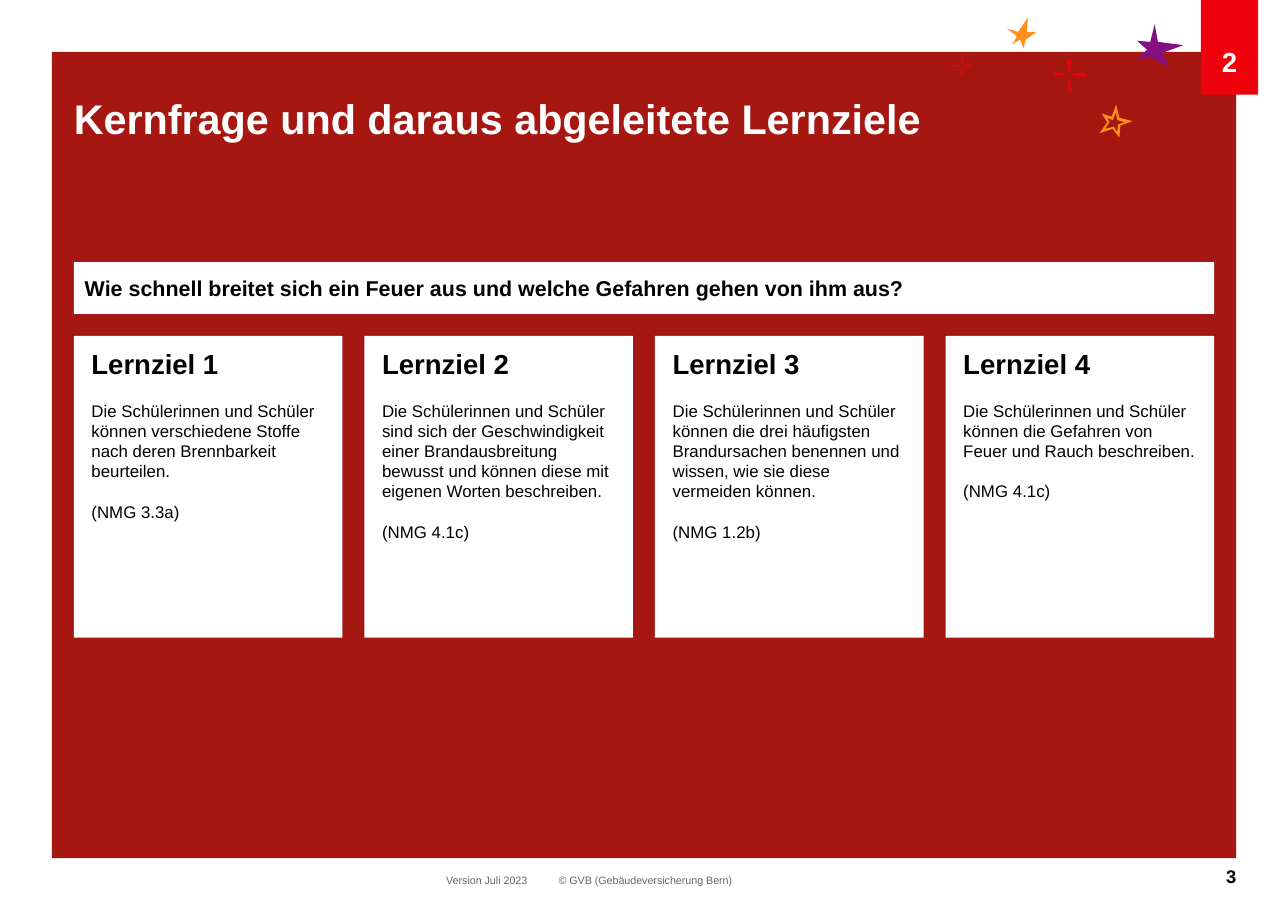
from pptx import Presentation
from pptx.dml.color import RGBColor
from pptx.enum.shapes import MSO_SHAPE
from pptx.enum.text import MSO_ANCHOR, PP_ALIGN
from pptx.util import Inches, Pt

FONT = "Arial"
DARK_RED = RGBColor(0xA6, 0x17, 0x11)
RED = RGBColor(0xEE, 0x00, 0x0C)
ORANGE = RGBColor(0xFF, 0x8F, 0x18)
PURPLE = RGBColor(0x83, 0x10, 0x80)
GRAY = RGBColor(0x66, 0x66, 0x66)
BLACK = RGBColor(0, 0, 0)
WHITE = RGBColor(0xFF, 0xFF, 0xFF)

TITLE = "Kernfrage und daraus abgeleitete Lernziele"
QUESTION = "Wie schnell breitet sich ein Feuer aus und welche Gefahren gehen von ihm aus?"
GOALS = [
    ("Lernziel 1", "Die Schülerinnen und Schüler können verschiedene Stoffe nach deren "
     "Brennbarkeit beurteilen.", "(NMG 3.3a)"),
    ("Lernziel 2", "Die Schülerinnen und Schüler sind sich der Geschwindigkeit einer "
     "Brandausbreitung bewusst und können diese mit eigenen Worten beschreiben.", "(NMG 4.1c)"),
    ("Lernziel 3", "Die Schülerinnen und Schüler können die drei häufigsten Brandursachen "
     "benennen und wissen, wie sie diese vermeiden können.", "(NMG 1.2b)"),
    ("Lernziel 4", "Die Schülerinnen und Schüler können die Gefahren von Feuer und Rauch "
     "beschreiben.", "(NMG 4.1c)"),
]
FOOTERS = [  # text, box, size, colour, bold, alignment
    ("Version Juli 2023", (4.05, 7.93, 0.85, 0.13), 7, GRAY, False, PP_ALIGN.LEFT),
    ("© GVB (Gebäudeversicherung Bern)", (5.07, 7.93, 1.62, 0.13), 7, GRAY, False, PP_ALIGN.LEFT),
    ("3", (10.51, 7.85, 0.71, 0.17), 12, BLACK, True, PP_ALIGN.RIGHT),
]

# Each star is a colour and its contours, in inches on the slide
STARS = [
    (PURPLE, [[(10.44, 0.38), (10.32, 0.37), (10.41, 0.45), (10.33, 0.54), (10.45, 0.52),
               (10.61, 0.61), (10.55, 0.48), (10.74, 0.41), (10.51, 0.38), (10.48, 0.22)]]),
    (ORANGE, [[(9.19, 0.4), (9.26, 0.36), (9.29, 0.44), (9.31, 0.36), (9.41, 0.29),
               (9.32, 0.29), (9.33, 0.16), (9.24, 0.29), (9.14, 0.26), (9.23, 0.33)]]),
    (ORANGE, [[(10.16, 1.25), (10.1, 1.17), (9.98, 1.21), (10.05, 1.11), (10, 1.03),
               (10.09, 1.06), (10.13, 0.95), (10.16, 1.07), (10.28, 1.1), (10.17, 1.14)],
              [(10.11, 1.15), (10.14, 1.2), (10.15, 1.13), (10.21, 1.11), (10.14, 1.09),
               (10.13, 1.02), (10.1, 1.09), (10.05, 1.07), (10.07, 1.11), (10.03, 1.17)]]),
]
# Rays of a spark around its centre, in inches
SPARK_RAYS = [
    [(0, -0.03), (-0.02, -0.14), (0.02, -0.13), (0.01, -0.03)],
    [(0.01, 0.03), (0.02, 0.15), (-0.01, 0.14), (0, 0.02)],
    [(0.03, -0.01), (0.14, -0.02), (0.15, 0.02), (0.03, 0)],
    [(-0.03, 0), (-0.13, 0.01), (-0.14, -0.02), (-0.03, -0.01)],
]
SPARKS = [(9.7, 0.68, 1), (8.73, 0.6, 0.58)]  # centre x, centre y, scale

LEFT, CONTENT_W = 0.67, 10.35
CARD_TOP, CARD_H, CARD_GAP = 3.05, 2.74, 0.2


def paint(shape, color):
    shape.shadow.inherit = False
    shape.fill.solid()
    shape.fill.fore_color.rgb = color
    shape.line.fill.background()


def add_rect(s, box, color):
    shape = s.shapes.add_shape(MSO_SHAPE.RECTANGLE, *map(Inches, box))
    paint(shape, color)
    return shape


def add_outline(s, contours, color):
    """Draw closed contours as one shape; an inner contour becomes a hole."""
    # The builder rounds to whole units, so points are passed in EMU
    contours = [[(Inches(x), Inches(y)) for x, y in points] for points in contours]
    builder = s.shapes.build_freeform(*contours[0][0])
    for i, points in enumerate(contours):
        if i:
            builder.move_to(*points[0])
        builder.add_line_segments(points[1:], close=True)
    paint(builder.convert_to_shape(), color)


def set_frame(tf, insets, anchor=MSO_ANCHOR.TOP, wrap=True):
    tf.word_wrap = wrap
    tf.vertical_anchor = anchor
    tf.margin_left, tf.margin_top, tf.margin_right, tf.margin_bottom = map(Inches, insets)


def write(p, text, size, color, bold=False, align=PP_ALIGN.LEFT):
    p.alignment = align
    r = p.add_run()
    r.text = text
    r.font.name, r.font.size, r.font.bold = FONT, Pt(size), bold
    r.font.color.rgb = color


def add_card(s, left, width, goal):
    tf = add_rect(s, (left, CARD_TOP, width, CARD_H), WHITE).text_frame
    set_frame(tf, (0.16, 0.1, 0.16, 0.1))
    for i, text in enumerate(goal):
        p = tf.add_paragraph() if i else tf.paragraphs[0]
        if i:
            p.space_before = Pt(13.2)
        write(p, text, 11 if i else 18, BLACK, bold=i == 0)


def main():
    prs = Presentation()
    prs.slide_width, prs.slide_height = Inches(11.69), Inches(8.27)
    s = prs.slides.add_slide(prs.slide_layouts[5])

    add_rect(s, (0.47, 0.47, 10.75, 7.32), DARK_RED)
    for color, contours in STARS:
        add_outline(s, contours, color)
    for cx, cy, scale in SPARKS:
        for ray in SPARK_RAYS:
            add_outline(s, [[(cx + x * scale, cy + y * scale) for x, y in ray]], RED)

    tf = add_rect(s, (10.9, 0, 0.52, 0.86), RED).text_frame
    set_frame(tf, (0, 0.4, 0, 0.15), MSO_ANCHOR.BOTTOM)
    write(tf.paragraphs[0], "2", 18, WHITE, True, PP_ALIGN.CENTER)

    title = s.shapes.title
    title.left, title.top, title.width, title.height = map(Inches, (LEFT, 0.85, 8.07, 0.58))
    title.element.getparent().append(title.element)  # in front of the red panel
    set_frame(title.text_frame, (0, 0, 0, 0))
    write(title.text_frame.paragraphs[0], TITLE, 27, WHITE, True)

    tf = add_rect(s, (LEFT, 2.38, CONTENT_W, 0.47), WHITE).text_frame
    set_frame(tf, (0.1, 0.05, 0.1, 0.05), MSO_ANCHOR.MIDDLE)
    write(tf.paragraphs[0], QUESTION, 14, BLACK, True)

    card_w = (CONTENT_W - CARD_GAP * (len(GOALS) - 1)) / len(GOALS)
    for i, goal in enumerate(GOALS):
        add_card(s, LEFT + i * (card_w + CARD_GAP), card_w, goal)

    for text, box, size, color, bold, align in FOOTERS:
        tf = s.shapes.add_textbox(*map(Inches, box)).text_frame
        set_frame(tf, (0, 0, 0, 0), wrap=align == PP_ALIGN.RIGHT)
        write(tf.paragraphs[0], text, size, color, bold, align)

    prs.save("out.pptx")


if __name__ == "__main__":
    main()
